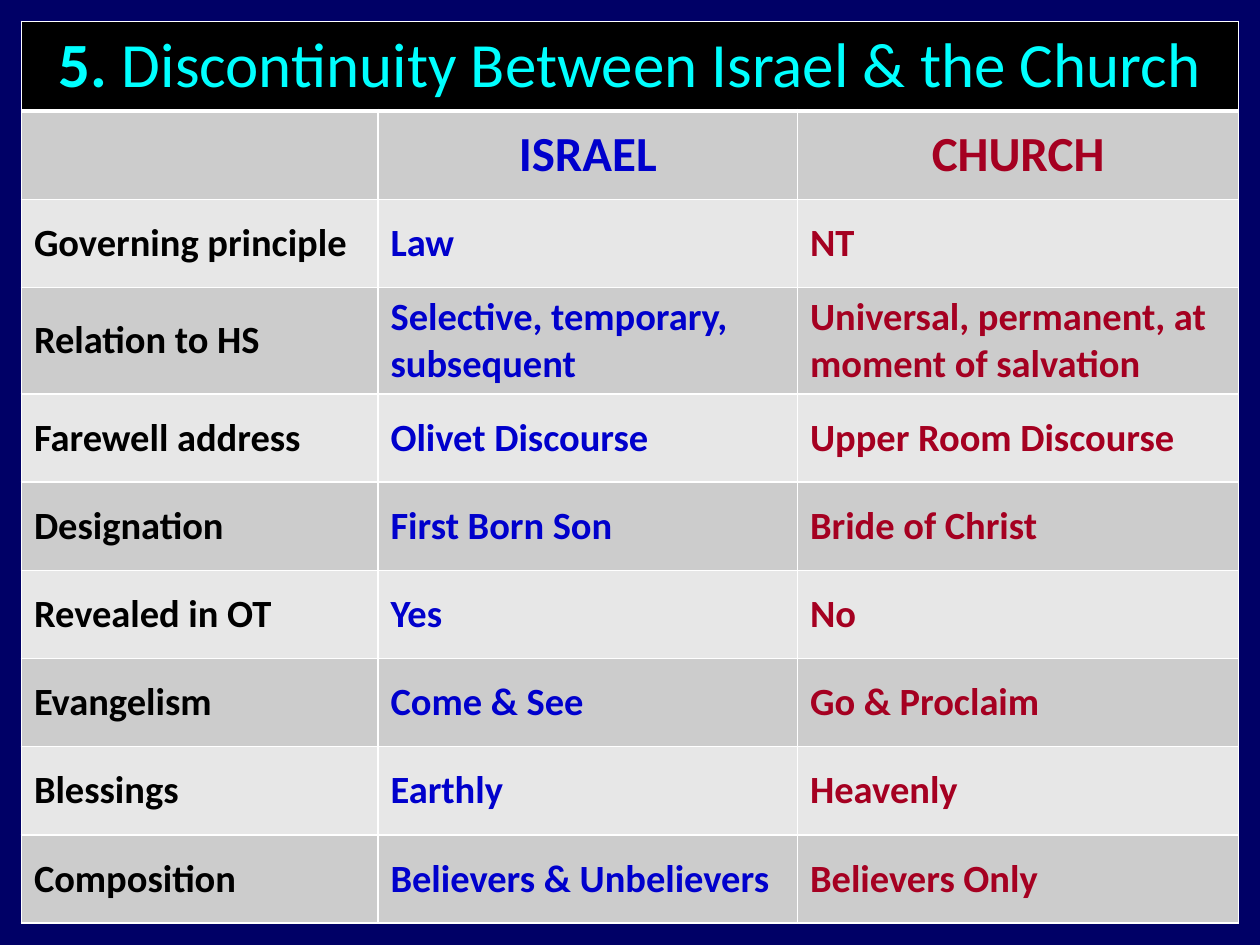
from dataclasses import dataclass

from lxml import etree
from pptx import Presentation
from pptx.dml.color import RGBColor
from pptx.enum.text import MSO_ANCHOR, PP_ALIGN
from pptx.oxml.ns import qn
from pptx.table import Table, _Cell
from pptx.util import Inches, Pt

MIDDLE = MSO_ANCHOR.MIDDLE
LEFT = PP_ALIGN.LEFT
CENTER = PP_ALIGN.CENTER


@dataclass(frozen=True)
class Theme:
    font: str = "Calibri"
    back: str = "000066"
    bar: str = "000000"
    title: str = "00FFFF"
    bands: tuple[str, str] = ("CCCCCC", "E7E7E7")
    inks: tuple[str, str, str] = ("000000", "0000CC", "A50021")
    rule: str = "FFFFFF"
    thin: float = 1
    thick: float = 3
    title_size: int = 36
    head_size: int = 28
    body_size: int = 22


@dataclass(frozen=True)
class Topic:
    label: str
    israel: str
    church: str


THEME = Theme()
WIDTHS = (2.83, 3.33, 3.5)
ROW = 0.7
EDGE = 0.17
TITLE = ("5. ", "Discontinuity Between Israel & the Church")
TOPICS = (
    Topic("", "ISRAEL", "CHURCH"),
    Topic("Governing principle", "Law", "NT"),
    Topic("Relation to HS", "Selective, temporary, subsequent",
          "Universal, permanent, at moment of salvation"),
    Topic("Farewell address", "Olivet Discourse", "Upper Room Discourse"),
    Topic("Designation", "First Born Son", "Bride of Christ"),
    Topic("Revealed in OT", "Yes", "No"),
    Topic("Evangelism", "Come & See", "Go & Proclaim"),
    Topic("Blessings", "Earthly", "Heavenly"),
    Topic("Composition", "Believers & Unbelievers", "Believers Only"),
)


def style_run(run, size: int, color: str, bold: bool) -> None:
    run.font.name = THEME.font
    run.font.size = Pt(size)
    run.font.bold = bold
    run.font.color.rgb = RGBColor.from_string(color)


def style_cell(cell: _Cell, fill: str, top: float, base: float) -> None:
    cell.vertical_anchor = MIDDLE
    cell.fill.solid()
    cell.fill.fore_color.rgb = RGBColor.from_string(fill)
    props = cell._tc.get_or_add_tcPr()
    sides = (("L", THEME.thin), ("R", THEME.thin), ("T", top), ("B", base))
    for spot, (side, width) in enumerate(sides):
        line = etree.Element(qn(f"a:ln{side}"), w=str(Pt(width)))
        solid = etree.SubElement(line, qn("a:solidFill"))
        etree.SubElement(solid, qn("a:srgbClr"), val=THEME.rule)
        props.insert(spot, line)


def draw_title(table: Table) -> None:
    for cell in table.rows[0].cells:
        style_cell(cell, THEME.bar, THEME.thin, THEME.thick)
    first = table.cell(0, 0)
    first.merge(table.cell(0, len(WIDTHS) - 1))
    para = first.text_frame.paragraphs[0]
    para.alignment = CENTER
    for text, bold in zip(TITLE, (True, False)):
        run = para.add_run()
        run.text = text
        style_run(run, THEME.title_size, THEME.title, bold)


def draw_topic(table: Table, index: int, topic: Topic) -> None:
    head = index == 0
    size = THEME.head_size if head else THEME.body_size
    top = THEME.thick if head else THEME.thin
    texts = (topic.label, topic.israel, topic.church)
    for cell, text, ink in zip(table.rows[index + 1].cells, texts, THEME.inks):
        style_cell(cell, THEME.bands[index % 2], top, THEME.thin)
        cell.text_frame.text = text
        para = cell.text_frame.paragraphs[0]
        para.alignment = CENTER if head else LEFT
        for run in para.runs:
            style_run(run, size, ink, True)


def main() -> None:
    deck = Presentation()
    deck.slide_width, deck.slide_height = Inches(10), Inches(7.5)
    slide = deck.slides.add_slide(deck.slide_layouts[6])
    slide.background.fill.solid()
    slide.background.fill.fore_color.rgb = RGBColor.from_string(THEME.back)

    count = len(TOPICS) + 1
    frame = slide.shapes.add_table(
        count, len(WIDTHS), Inches(EDGE), Inches(EDGE),
        Inches(sum(WIDTHS)), Inches(ROW * count))
    table = frame.table
    for column, width in zip(table.columns, WIDTHS):
        column.width = Inches(width)
    for row in table.rows:
        row.height = Inches(ROW)
    draw_title(table)
    for index, topic in enumerate(TOPICS):
        draw_topic(table, index, topic)
    deck.save("out.pptx")


if __name__ == "__main__":
    main()
